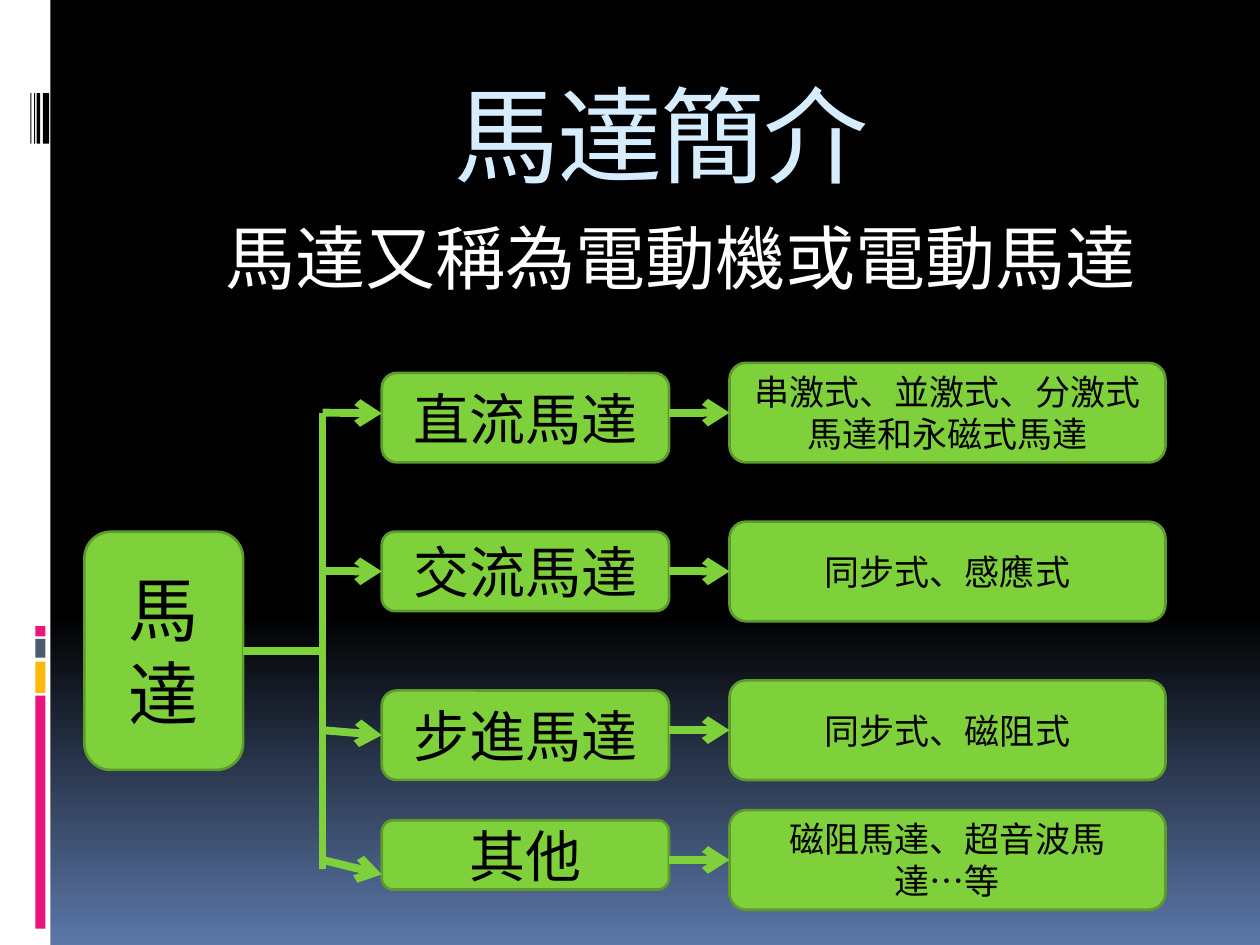
"""Build a slide that classifies motors in a left-to-right tree."""
from typing import NamedTuple, Optional

from lxml.etree import SubElement
from pptx import Presentation
from pptx.dml.color import RGBColor
from pptx.enum.shapes import MSO_CONNECTOR, MSO_SHAPE
from pptx.enum.text import MSO_ANCHOR, PP_ALIGN
from pptx.oxml.ns import qn
from pptx.util import Inches, Pt

FONT = "Noto Sans CJK SC"
GREEN = "7FD13B"
DARK_GREEN = "5E9B2C"
BLACK = "000000"
WHITE = "FFFFFF"
PINK = "EA157A"

TRUNK_X = 2.56
TYPE_LEFT, TYPE_WIDTH = 3.03, 2.28
DETAIL_LEFT, DETAIL_WIDTH, DETAIL_HEIGHT = 5.79, 3.46, 0.79


class Bar(NamedTuple):
    left: float
    top: float
    width: float
    height: float
    color: str


class Branch(NamedTuple):
    name: str
    detail: str
    type_top: float
    type_height: float
    detail_top: float
    arrow_end: float

    @property
    def middle(self) -> float:
        return self.detail_top + DETAIL_HEIGHT / 2

    @property
    def type_middle(self) -> float:
        return self.type_top + self.type_height / 2


BARS = [
    Bar(0, 0, 0.4, 7.5, WHITE),
    Bar(0.28, 5.52, 0.08, 1.85, PINK),
    Bar(0.28, 5.25, 0.08, 0.25, "FEB80A"),
    Bar(0.28, 5.07, 0.08, 0.15, "4E5B6F"),
    Bar(0.28, 4.97, 0.08, 0.08, PINK),
    Bar(0.34, 0.74, 0.05, 0.4, BLACK),
    Bar(0.29, 0.74, 0.03, 0.4, BLACK),
    Bar(0.27, 0.74, 0.01, 0.4, BLACK),
    Bar(0.24, 0.74, 0.01, 0.4, BLACK),
]

BRANCHES = [
    Branch("直流馬達", "串激式、並激式、分激式馬達和永磁式馬達", 2.96, 0.71, 2.88, 3.28),
    Branch("交流馬達", "同步式、感應式", 4.22, 0.63, 4.14, 4.54),
    Branch("步進馬達", "同步式、磁阻式", 5.48, 0.71, 5.4, 5.84),
    Branch("其他", "磁阻馬達、超音波馬\n達…等", 6.51, 0.55, 6.43, 6.94),
]


def rgb(color: str) -> RGBColor:
    """Turn a hex string into a colour."""
    return RGBColor.from_string(color)


def write_text(text_frame, text: str, size: float, color: str, anchor=MSO_ANCHOR.MIDDLE) -> None:
    """Fill a text frame with centred, formatted text."""
    text_frame.text = text
    text_frame.word_wrap = True
    text_frame.vertical_anchor = anchor
    for paragraph in text_frame.paragraphs:
        paragraph.alignment = PP_ALIGN.CENTER
        for run in paragraph.runs:
            run.font.size = Pt(size)
            run.font.name = FONT
            run.font.color.rgb = rgb(color)
            SubElement(run.font._element, qn("a:ea")).set("typeface", FONT)


def add_bar(slide, bar: Bar) -> None:
    """Draw a plain decorative bar."""
    lengths = [Inches(length) for length in bar[:4]]
    shape = slide.shapes.add_shape(MSO_SHAPE.RECTANGLE, *lengths)
    shape.shadow.inherit = False
    shape.fill.solid()
    shape.fill.fore_color.rgb = rgb(bar.color)
    shape.line.fill.background()


def add_box(slide, text: str, left: float, top: float, width: float, height: float, size: float):
    """Draw a green rounded box with text."""
    shape = slide.shapes.add_shape(
        MSO_SHAPE.ROUNDED_RECTANGLE, Inches(left), Inches(top), Inches(width), Inches(height)
    )
    shape.shadow.inherit = False
    shape.fill.solid()
    shape.fill.fore_color.rgb = rgb(GREEN)
    shape.line.color.rgb = rgb(DARK_GREEN)
    shape.line.width = Pt(1.5)
    write_text(shape.text_frame, text, size, BLACK)
    return shape


def add_line(slide, start: tuple[float, float], end: tuple[float, float],
             start_box: Optional[object] = None, end_box: Optional[object] = None,
             arrow: bool = False) -> None:
    """Draw a thick line, joined to a box's right or left side where given."""
    points = [Inches(length) for length in (*start, *end)]
    connector = slide.shapes.add_connector(MSO_CONNECTOR.STRAIGHT, *points)
    if start_box is not None:
        connector.begin_connect(start_box, 3)
    if end_box is not None:
        connector.end_connect(end_box, 1)
    connector.line.color.rgb = rgb(GREEN)
    connector.line.width = Pt(4.5)
    if arrow:
        SubElement(connector.line._get_or_add_ln(), qn("a:tailEnd")).set("type", "arrow")
    SubElement(connector._element.spPr, qn("a:effectLst"))


def add_branch(slide, branch: Branch) -> None:
    """Draw one motor type with its details and arrows."""
    type_box = add_box(slide, branch.name, TYPE_LEFT, branch.type_top, TYPE_WIDTH, branch.type_height, 32)
    detail_box = add_box(slide, branch.detail, DETAIL_LEFT, branch.detail_top, DETAIL_WIDTH, DETAIL_HEIGHT, 20)
    joins_type = abs(branch.arrow_end - branch.type_middle) < 0.01
    leaves_middle = abs(branch.middle - branch.type_middle) < 0.01
    add_line(slide, (TRUNK_X, branch.middle), (TYPE_LEFT, branch.arrow_end),
             end_box=type_box if joins_type else None, arrow=True)
    add_line(slide, (TYPE_LEFT + TYPE_WIDTH, branch.middle), (DETAIL_LEFT, branch.middle),
             start_box=type_box if leaves_middle else None, end_box=detail_box, arrow=True)


def set_background(slide) -> None:
    """Fade the background from black to blue at the bottom."""
    fill = slide.background.fill
    fill.gradient()
    fill.gradient_angle = 270
    for stop, position, color in zip(fill.gradient_stops, (0.65, 1), (BLACK, "5B77A8")):
        stop.position = position
        stop.color.rgb = rgb(color)


def add_headings(slide) -> None:
    """Write the title and the line under it."""
    title = slide.shapes.title
    title.left, title.top, title.width, title.height = Inches(1), Inches(0.56), Inches(8.5), Inches(1)
    write_text(title.text_frame, "馬達簡介", 60, "D6ECFF")
    title.text_frame.paragraphs[0].runs[0].font._element.set("spc", "-100")
    subtitle = slide.shapes.add_textbox(Inches(1.06), Inches(1.7), Inches(8.5), Inches(1.01))
    write_text(subtitle.text_frame, "馬達又稱為電動機或電動馬達", 40, WHITE, MSO_ANCHOR.TOP)
    subtitle.text_frame.margin_left = Inches(0.28)
    subtitle.text_frame.margin_top = 0


def main() -> None:
    """Build and save the presentation."""
    presentation = Presentation()
    presentation.slide_width, presentation.slide_height = Inches(10), Inches(7.5)
    slide = presentation.slides.add_slide(presentation.slide_layouts[5])
    set_background(slide)
    for bar in BARS:
        add_bar(slide, bar)
    add_headings(slide)
    root_left, root_top, root_width, root_height = 0.67, 4.22, 1.26, 1.89
    root = add_box(slide, "馬\n達", root_left, root_top, root_width, root_height, 40)
    root_middle = root_top + root_height / 2
    add_line(slide, (root_left + root_width, root_middle), (TRUNK_X, root_middle), start_box=root)
    add_line(slide, (TRUNK_X, root_middle), (TRUNK_X, 6.9))
    add_line(slide, (TRUNK_X, BRANCHES[0].middle), (TRUNK_X, root_middle))
    for branch in BRANCHES:
        add_branch(slide, branch)
    presentation.save("out.pptx")


if __name__ == "__main__":
    main()
